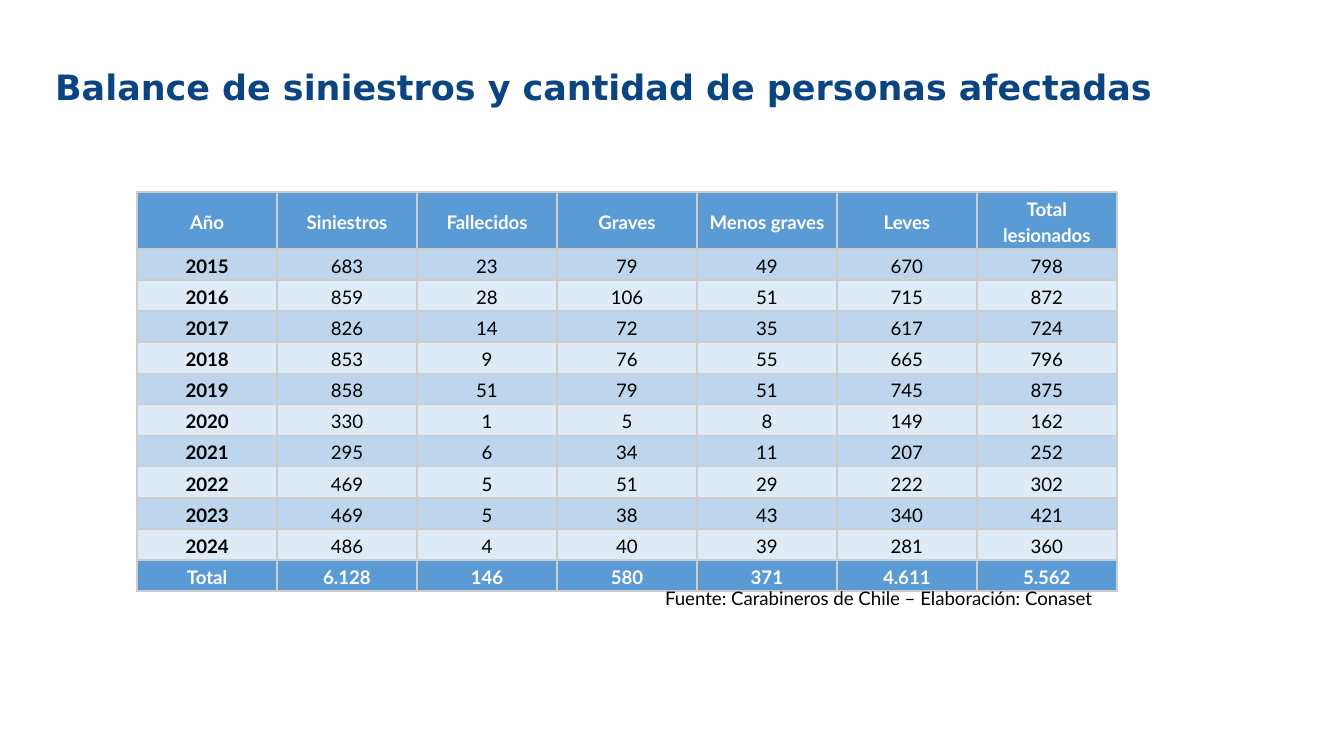
import pptx
import pptx.util
import pptx.dml.color
import pptx.enum.text
import pptx.oxml
from lxml import etree

WIDE = pptx.util.Inches(10)
HIGH = WIDE * 9 // 16
HUES = {
    "title": "0B4581", "head": "5B9BD5", "odd": "BDD6EE", "even": "DEEAF6",
    "rule": "CCCCCC", "light": "FFFFFF", "dark": "000000",
}
ALIGN = pptx.enum.text.PP_ALIGN
ROWS = [
    ["Año", "Siniestros", "Fallecidos", "Graves", "Menos graves", "Leves", "Total\nlesionados"],
    ["2015", "683", "23", "79", "49", "670", "798"],
    ["2016", "859", "28", "106", "51", "715", "872"],
    ["2017", "826", "14", "72", "35", "617", "724"],
    ["2018", "853", "9", "76", "55", "665", "796"],
    ["2019", "858", "51", "79", "51", "745", "875"],
    ["2020", "330", "1", "5", "8", "149", "162"],
    ["2021", "295", "6", "34", "11", "207", "252"],
    ["2022", "469", "5", "51", "29", "222", "302"],
    ["2023", "469", "5", "38", "43", "340", "421"],
    ["2024", "486", "4", "40", "39", "281", "360"],
    ["Total", "6.128", "146", "580", "371", "4.611", "5.562"],
]


def color(name):
    return pptx.dml.color.RGBColor.from_string(HUES[name])


def area(left, top, width, height):
    """Turn percentages of the slide into lengths."""
    return [int(part * side / 100) for part, side in
            ((left, WIDE), (top, HIGH), (width, WIDE), (height, HIGH))]


def pad(owner, across, down):
    owner.margin_left = owner.margin_right = pptx.util.Inches(across)
    owner.margin_top = owner.margin_bottom = pptx.util.Inches(down)


def write(frame, text, size=10, font="Lato", hue="dark", bold=False,
          align=ALIGN.LEFT, space=1.0):
    frame.text = text
    for para in frame.paragraphs:
        para.alignment = align
        para.line_spacing = space
        for run in para.runs:
            run.font.size = pptx.util.Pt(size)
            run.font.name = font
            run.font.bold = bold
            run.font.color.rgb = color(hue)


def label(slide, box, text, across, down, **style):
    frame = slide.shapes.add_textbox(*box).text_frame
    frame.word_wrap = True
    pad(frame, across, down)
    write(frame, text, **style)


def border(cell, width=0.94):
    props = cell._tc.get_or_add_tcPr()
    for at, side in enumerate(("lnL", "lnR", "lnT", "lnB")):
        line = etree.Element(pptx.oxml.ns.qn("a:" + side), w=str(pptx.util.Pt(width)))
        fill = etree.SubElement(line, pptx.oxml.ns.qn("a:solidFill"))
        etree.SubElement(fill, pptx.oxml.ns.qn("a:srgbClr"), val=HUES["rule"])
        props.insert(at, line)


def grid(slide, box, rows, head=18, body=11):
    """Place the table; head and body are the row heights in shares."""
    left, top, width, height = box
    table = slide.shapes.add_table(len(rows), len(rows[0]), *box).table
    unit = height / (head + body * (len(rows) - 1))
    for col in table.columns:
        col.width = int(width / len(rows[0]))
    for r, row in enumerate(rows):
        table.rows[r].height = int(unit * (body if r else head))
        strong = r in (0, len(rows) - 1)
        back = "head" if strong else "odd" if r % 2 else "even"
        for c, text in enumerate(row):
            cell = table.cell(r, c)
            cell.fill.solid()
            cell.fill.fore_color.rgb = color(back)
            cell.vertical_anchor = pptx.enum.text.MSO_ANCHOR.MIDDLE
            pad(cell, 0.03, 0.02)
            border(cell)
            write(cell.text_frame, text, hue="light" if strong else "dark",
                  bold=strong or c == 0, align=ALIGN.CENTER, space=1.15)


def main():
    deck = pptx.Presentation()
    deck.slide_width, deck.slide_height = WIDE, HIGH
    slide = deck.slides.add_slide(deck.slide_layouts[6])
    label(slide, area(3.4, 8.65, 93.2, 11.2),
          "Balance de siniestros y cantidad de personas afectadas", 0.07, 0.04,
          size=18.7, font="DejaVu Sans", hue="title", bold=True, space=0.9)
    grid(slide, area(10.2, 25.4, 72.9, 50.7), ROWS)
    label(slide, area(48.5, 76.1, 35.9, 6.6),
          "Fuente: Carabineros de Chile – Elaboración: Conaset", 0.1, 0.1)
    deck.save("out.pptx")


if __name__ == "__main__":
    main()
